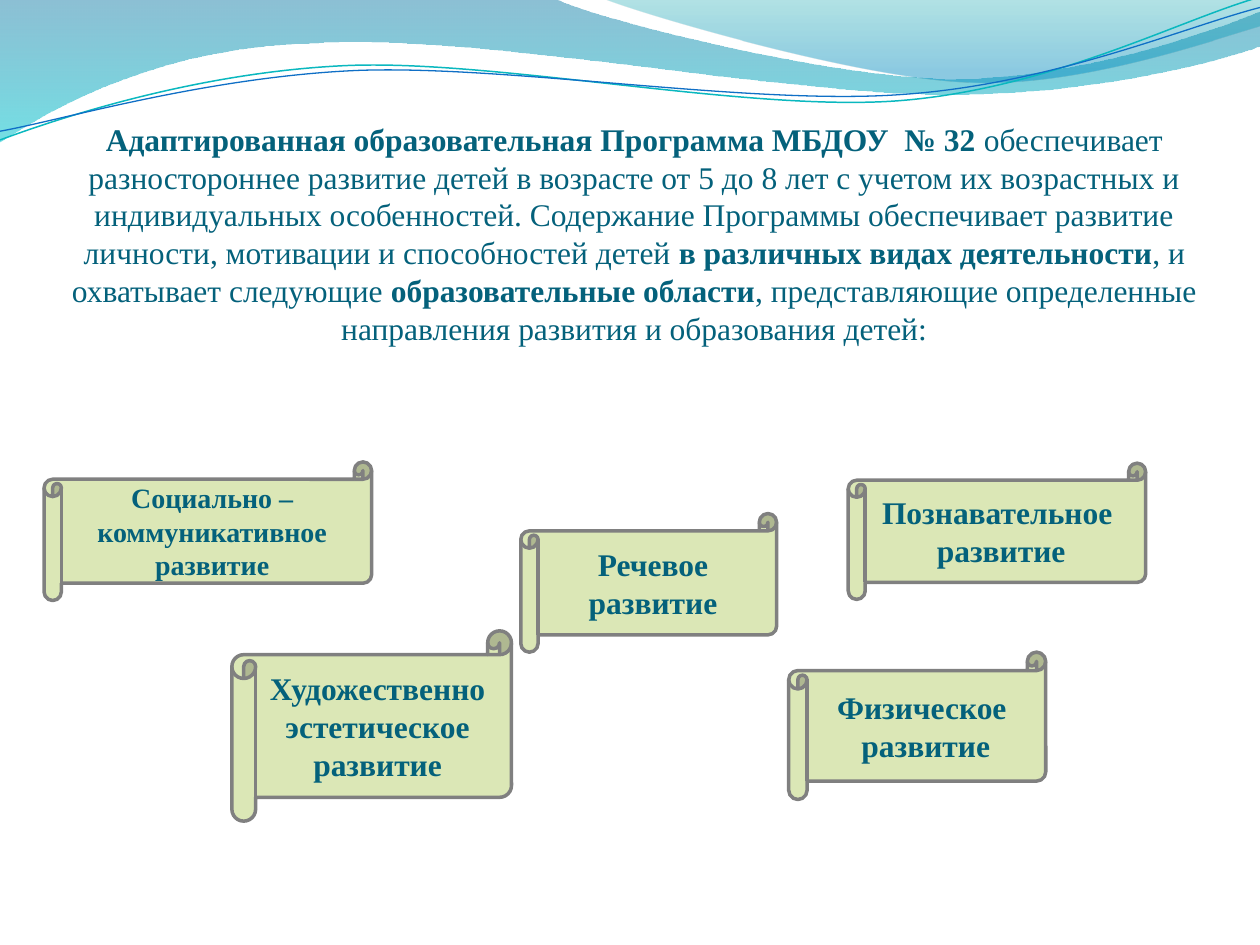
import math

from lxml import etree
from pptx import Presentation
from pptx.dml import color
from pptx.enum import shapes, text
from pptx.oxml import ns
from pptx.util import Pt

FONT = "Times New Roman"
INK = "04617B"
TILT = -2.7

BANDS = [
    ([(0, 0), (317, -0.7),
      (343, 12, 478, 45, 546, 45), (614, 45, 690, 19, 720, 6.5),
      (720.7, 26),
      (708, 32, 626, 55, 537, 54), (448, 54, 275, 20, 185, 24.5),
      (93, 26, 33, 60, -0.7, 81.4), (0, 0)],
     [(0, "0074A1", 45), (1, "00C6CF", 55)]),
    ([(345, -0.7),
      (366, 8, 491, 45, 554, 47), (616, 50, 692, 23, 720, 15),
      (720, 0), (345, -0.7)],
     [(0, "00A1A9", 30), (0.8, "008BBF", 45)]),
]
CURVES = [
    ([(0, 80),
      (35, 67, 114, 41, 199, 37.4), (284, 34, 427, 64, 513, 57.6),
      (600, 51, 675, 11, 719, -1.4)], (359.3, 41.4), "0AB8BF", 0.85),
    ([(0, 75),
      (34, 69, 118, 44, 204, 40.3), (290, 37, 430, 60.5, 516, 54),
      (602, 48, 678, 15, 720, 4.3)], (359.6, 42.5), "0F6FC6", 0.75),
]
TITLE = [
    ("Адаптированная образовательная Программа МБДОУ  № 32 ", True),
    ("обеспечивает разностороннее развитие детей в возрасте от 5 до 8 лет "
     "с учетом их возрастных и индивидуальных особенностей. Содержание "
     "Программы обеспечивает развитие личности, мотивации и способностей "
     "детей ", False),
    ("в различных видах деятельности", True),
    (", и охватывает следующие ", False),
    ("образовательные области", True),
    (", представляющие определенные направления развития и образования "
     "детей:", False),
]
SCROLLS = [
    ((25.2, 264, 187.2, 79.2), 16,
     ["Социально –", "коммуникативное", "развитие"]),
    ((297.6, 293.5, 146.2, 79.2), 18, ["Речевое развитие"]),
    ((484.7, 264.7, 170, 77.8), 18, ["Познавательное ", "развитие"]),
    ((132.5, 360.5, 159.8, 108.7), 18,
     ["Художественно", " эстетическое ", "развитие"]),
    ((450.7, 372.7, 146.9, 84.2), 18, ["Физическое", " развитие"]),
]


def rgb(code):
    return color.RGBColor.from_string(code)


def turn(step, mid):
    sin, cos = math.sin(math.radians(-TILT)), math.cos(math.radians(TILT))
    out = []
    for x, y in zip(step[::2], step[1::2]):
        x, y = x - mid[0], y - mid[1]
        out += [mid[0] + x * cos - y * sin, mid[1] + x * sin + y * cos]
    return out


def add_path(slide, steps, close):
    dots = [(Pt(x), Pt(y)) for step in steps
            for x, y in zip(step[::2], step[1::2])]
    pen = slide.shapes.build_freeform(*dots[0])
    pen.add_line_segments(dots[1:], close=close)
    shape = pen.convert_to_shape()
    shape.shadow.inherit = False
    parts = iter(list(shape.element.iter(ns.qn("a:lnTo"))))
    for step in steps[1:]:
        part = next(parts)
        if len(step) == 6:
            bend = etree.Element(ns.qn("a:cubicBezTo"))
            part.addprevious(bend)
            for piece in (part, next(parts), next(parts)):
                bend.append(piece[0])
                piece.getparent().remove(piece)
    return shape


def add_band(slide, steps, stops):
    shape = add_path(slide, steps, True)
    shape.line.fill.background()
    shape.fill.gradient()
    shape.fill.gradient_angle = 270
    for stop, (place, code, alpha) in zip(shape.fill.gradient_stops, stops):
        stop.position = place
        stop.color.rgb = rgb(code)
    tones = list(shape.element.iter(ns.qn("a:srgbClr")))
    for tone, (place, code, alpha) in zip(tones, stops):
        node = etree.SubElement(tone, ns.qn("a:alpha"))
        node.set("val", str(alpha * 1000))


def add_curve(slide, steps, mid, code, width):
    shape = add_path(slide, [turn(step, mid) for step in steps], False)
    shape.rotation = TILT
    shape.fill.background()
    shape.line.color.rgb = rgb(code)
    shape.line.width = Pt(width)


def style(para, size):
    para.alignment = text.PP_ALIGN.CENTER
    para.font.name = FONT
    para.font.size = Pt(size)
    para.font.color.rgb = rgb(INK)


def set_title(slide):
    title = slide.shapes.title
    title.left, title.top = Pt(36), Pt(21.6)
    title.width, title.height = Pt(653), Pt(486.7)
    title.element.getparent().append(title.element)
    frame = title.text_frame
    frame.auto_size = text.MSO_AUTO_SIZE.NONE
    frame.word_wrap = True
    frame.vertical_anchor = text.MSO_ANCHOR.TOP
    frame.margin_left = frame.margin_right = frame.margin_bottom = 0
    frame.margin_top = Pt(46.8)
    para = frame.paragraphs[0]
    style(para, 18)
    for words, bold in TITLE:
        run = para.add_run()
        run.text = words
        run.font.bold = bold


def add_scroll(slide, box, size, lines):
    shape = slide.shapes.add_shape(
        shapes.MSO_SHAPE.HORIZONTAL_SCROLL, *map(Pt, box))
    shape.shadow.inherit = False
    shape.fill.solid()
    shape.fill.fore_color.rgb = rgb("DBE7B6")
    shape.line.color.rgb = rgb("808080")
    shape.line.width = Pt(2)
    frame = shape.text_frame
    frame.vertical_anchor = text.MSO_ANCHOR.MIDDLE
    frame.text = "\n".join(lines)
    for para in frame.paragraphs:
        style(para, size)
        para.font.bold = True


def main():
    deck = Presentation()
    deck.slide_width, deck.slide_height = Pt(720), Pt(540)
    slide = deck.slides.add_slide(deck.slide_layouts[5])
    for band in BANDS:
        add_band(slide, *band)
    for curve in CURVES:
        add_curve(slide, *curve)
    set_title(slide)
    for scroll in SCROLLS:
        add_scroll(slide, *scroll)
    deck.save("out.pptx")


if __name__ == "__main__":
    main()
